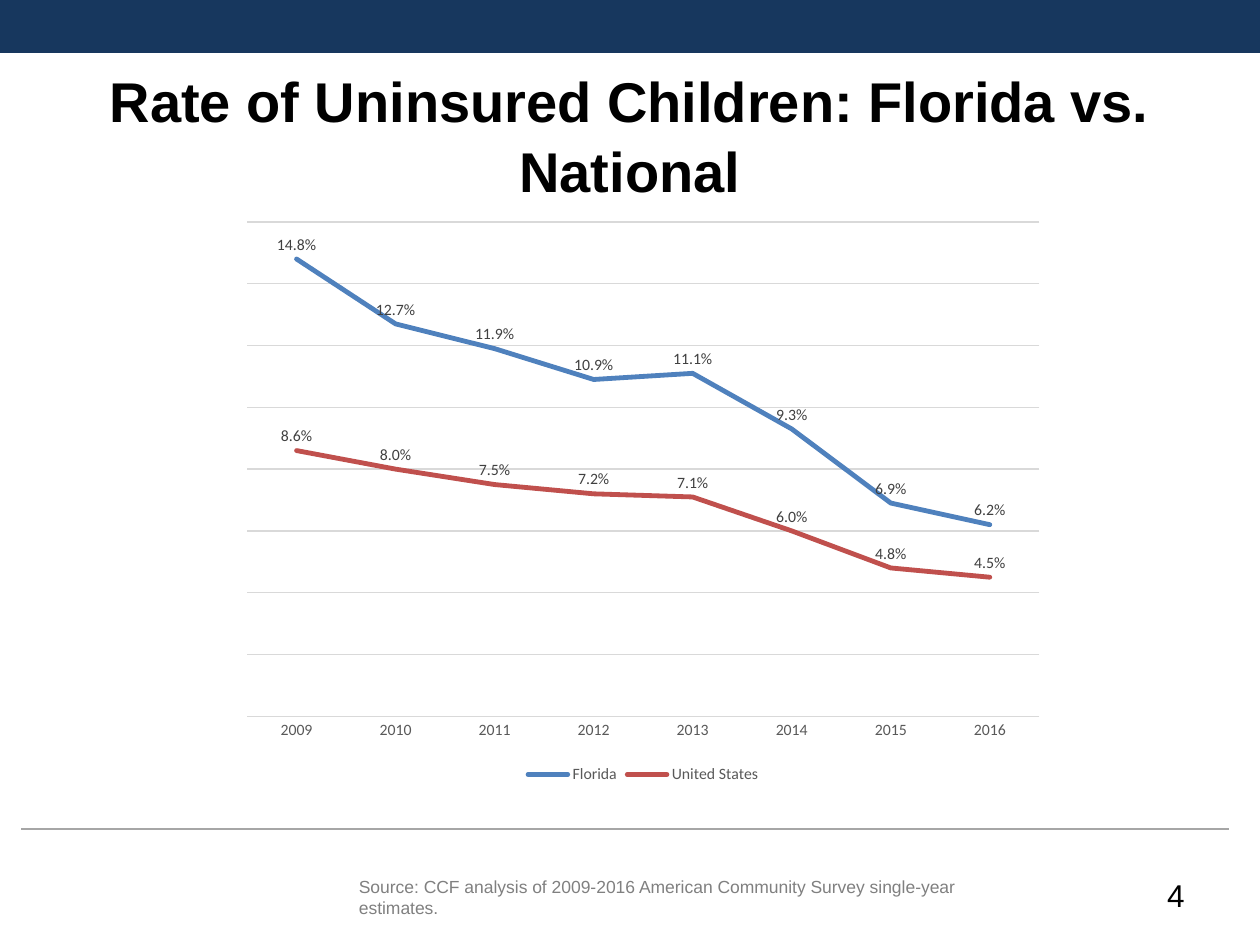
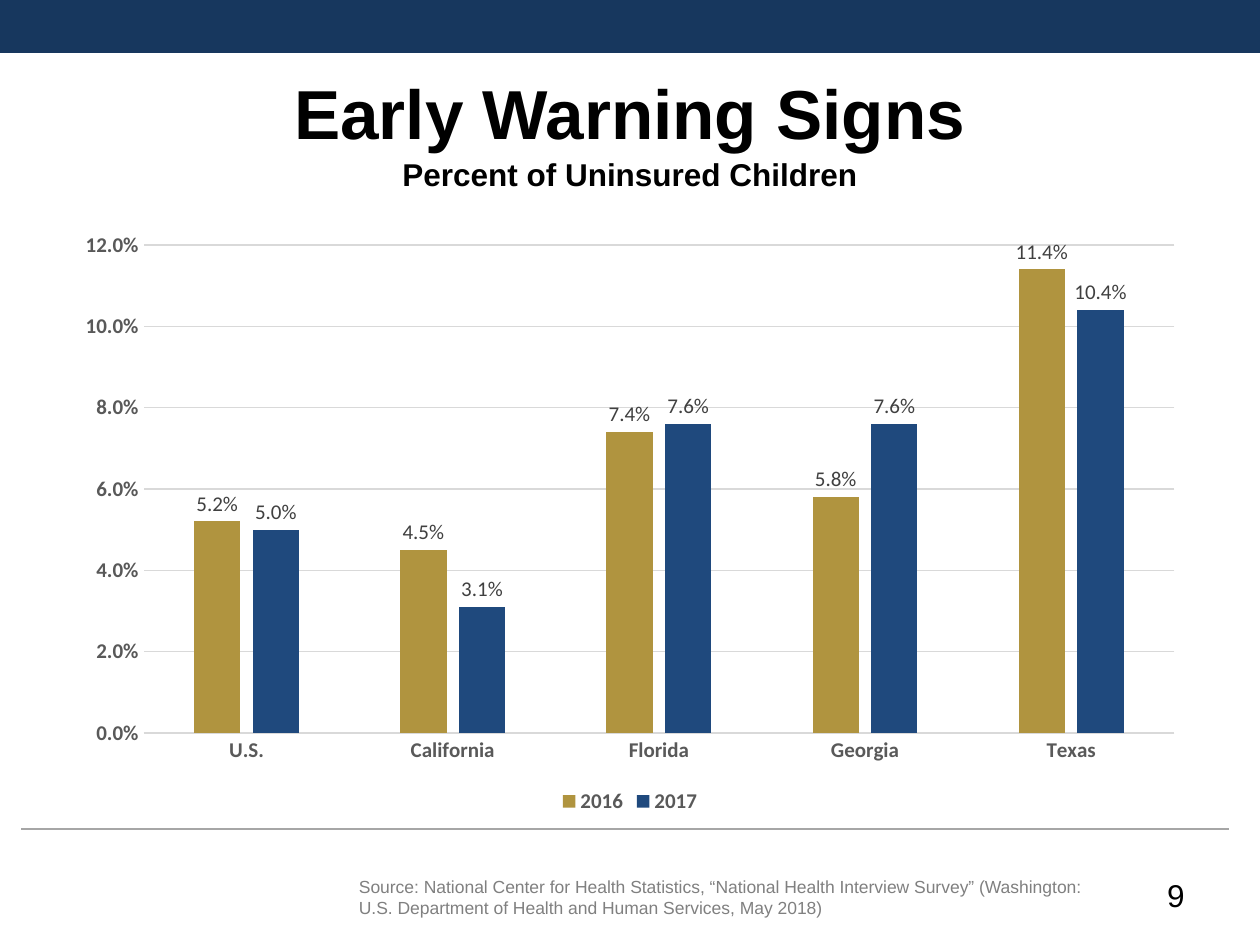
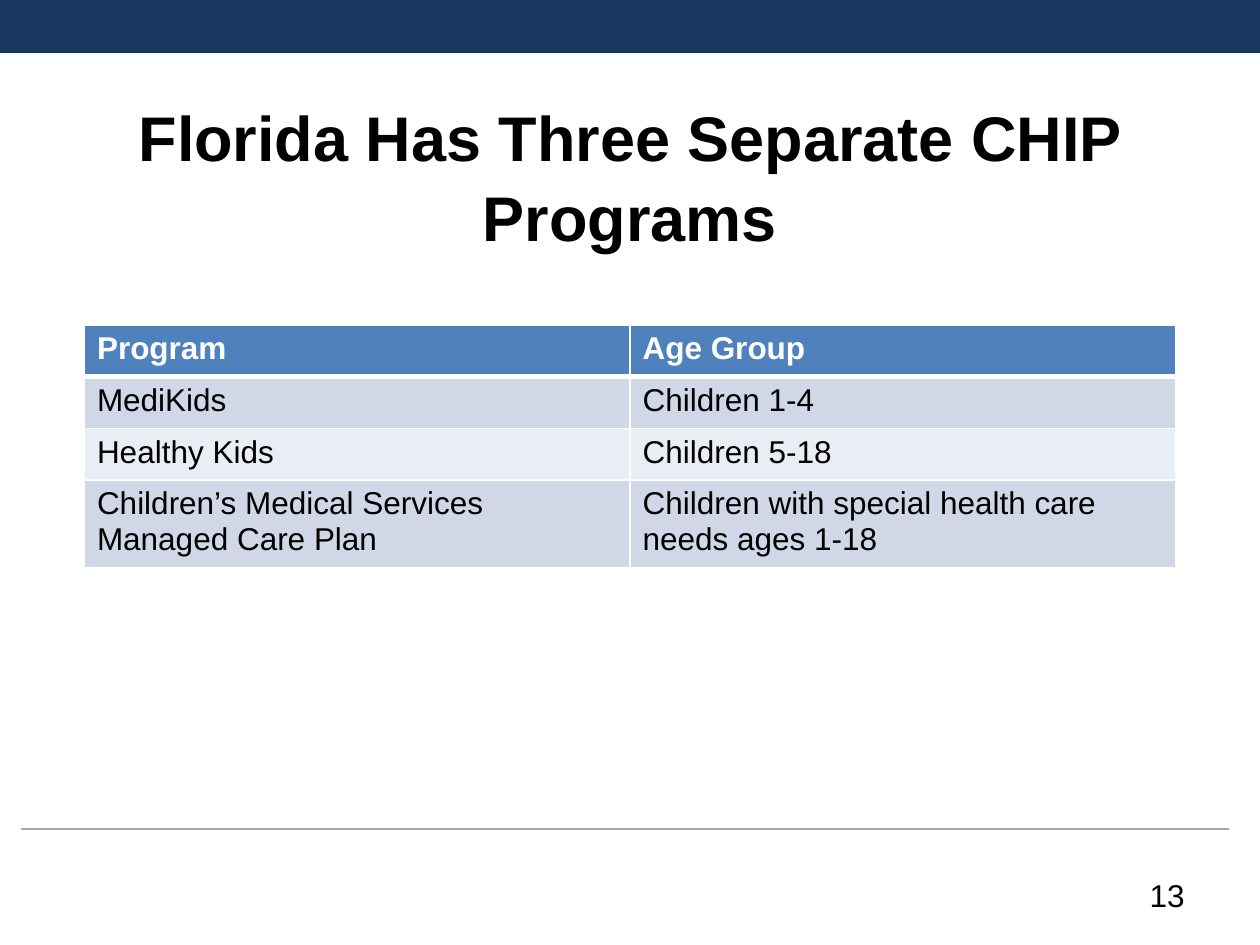
"""Build three slides on children's health coverage in Florida."""
from dataclasses import dataclass

from lxml.etree import SubElement
from pptx import Presentation
from pptx.chart.data import CategoryChartData
from pptx.dml.color import RGBColor as RGB
from pptx.enum.chart import (XL_CHART_TYPE as CT, XL_LABEL_POSITION as LP,
                             XL_LEGEND_POSITION as LEGEND, XL_TICK_MARK as TICK)
from pptx.enum.shapes import MSO_CONNECTOR as CONN, MSO_SHAPE as SHAPE
from pptx.enum.text import MSO_ANCHOR as ANCHOR, PP_ALIGN as ALIGN
from pptx.oxml.ns import qn
from pptx.util import Emu, Pt

PX = 9144


@dataclass(frozen=True)
class Theme:
    """Colours, fonts and type sizes of the deck."""
    band: str = "17375E"
    rule: str = "A6A6A6"
    text: str = "000000"
    white: str = "FFFFFF"
    source: str = "808080"
    axis: str = "595959"
    label: str = "404040"
    grid: str = "D9D9D9"
    header: str = "4F81BD"
    stripes: tuple[str, str] = ("D0D8E8", "E9EDF4")
    font: str = "Arial"
    chart_font: str = "Calibri"
    source_size: float = 10
    body_size: float = 18
    title_spacing: float = 1.05


@dataclass(frozen=True)
class Box:
    """A rectangle in px."""
    x: int
    y: int
    w: int
    h: int

    def emu(self) -> tuple[Emu, ...]:
        """Return the rectangle in EMU."""
        return tuple(Emu(v * PX) for v in (self.x, self.y, self.w, self.h))


@dataclass(frozen=True)
class Series:
    """One named chart series."""
    name: str
    color: str
    values: tuple[float, ...]


@dataclass(frozen=True)
class ChartSpec:
    """A chart with its data and format."""
    kind: CT
    box: Box
    categories: tuple[str, ...]
    series: tuple[Series, ...]
    maximum: float
    size: float
    bold: bool
    label_position: LP


@dataclass(frozen=True)
class Page:
    """The frame of one slide: title lines with sizes, number and source."""
    number: int
    title_box: Box
    title: tuple[tuple[str, float], ...]
    source: str = ""
    source_width: int = 0


THEME = Theme()
PAGE_W, PAGE_H = 1000, 750
FOOTER_Y, FOOTER_H = 690, 40

RATES = Page(4, Box(0, 77, 1000, 58),
             (("Rate of Uninsured Children: Florida vs. National", 32),),
             "Source: CCF analysis of 2009-2016 American Community Survey "
             "single-year estimates.", 533)
SIGNS = Page(9, Box(50, 50, 900, 105),
             (("Early Warning Signs", 39.6), ("Percent of Uninsured Children", 18)),
             "Source: National Center for Health Statistics, “National Health "
             "Interview Survey” (Washington: U.S. Department of Health and Human "
             "Services, May 2018)", 608)
PROGRAMS = Page(13, Box(50, 86, 900, 105),
                (("Florida Has Three Separate CHIP Programs", 36),))

RATE_CHART = ChartSpec(
    CT.LINE, Box(183, 167, 655, 459), tuple(str(y) for y in range(2009, 2017)),
    (Series("Florida", "4F81BD",
            (0.148, 0.127, 0.119, 0.109, 0.111, 0.093, 0.069, 0.062)),
     Series("United States", "C0504D",
            (0.086, 0.080, 0.075, 0.072, 0.071, 0.060, 0.048, 0.045))),
    0.16, 9, False, LP.ABOVE)
STATE_CHART = ChartSpec(
    CT.COLUMN_CLUSTERED, Box(50, 175, 900, 475),
    ("U.S.", "California", "Florida", "Georgia", "Texas"),
    (Series("2016", "B0943F", (0.052, 0.045, 0.074, 0.058, 0.114)),
     Series("2017", "1F497D", (0.050, 0.031, 0.076, 0.076, 0.104))),
    0.12, 12, True, LP.OUTSIDE_END)

PROGRAM_BOX = Box(67, 258, 866, 188)
ROW_HEIGHTS = (41, 41, 41, 65)
PROGRAM_ROWS = (
    ("Program", "Age Group"),
    ("MediKids", "Children 1-4"),
    ("Healthy Kids", "Children 5-18"),
    ("Children’s Medical Services Managed Care Plan",
     "Children with special health care needs ages 1-18"),
)


def set_font(font, *, size: float, color: str, bold: bool = False,
             name: str = THEME.font) -> None:
    """Format a font."""
    font.name, font.size, font.bold = name, Pt(size), bold
    font.color.rgb = RGB.from_string(color)


def set_line(line, color: str, width: float) -> None:
    """Give a line its colour and width."""
    line.color.rgb = RGB.from_string(color)
    line.width = Pt(width)


def write(p, text: str, *, size: float = THEME.body_size, color: str = THEME.text,
          bold: bool = False, align: ALIGN = ALIGN.LEFT) -> None:
    """Add a formatted run to a paragraph."""
    p.alignment = align
    r = p.add_run()
    r.text = text
    set_font(r.font, size=size, color=color, bold=bold)


def add_box(s, box: Box, anchor: ANCHOR = ANCHOR.TOP):
    """Add a wrapping text box and return its first paragraph."""
    tf = s.shapes.add_textbox(*box.emu()).text_frame
    tf.word_wrap = True
    tf.vertical_anchor = anchor
    return tf.paragraphs[0]


def add_page(prs, page: Page):
    """Add a slide with band, rule, title, source and number."""
    s = prs.slides.add_slide(prs.slide_layouts[6])
    band = s.shapes.add_shape(SHAPE.RECTANGLE, *Box(0, 0, PAGE_W, 42).emu())
    band.shadow.inherit = False
    band.fill.solid()
    band.fill.fore_color.rgb = RGB.from_string(THEME.band)
    band.line.fill.background()
    rule = s.shapes.add_connector(
        CONN.STRAIGHT, *(Emu(v * PX) for v in (17, 658, 975, 658)))
    set_line(rule.line, THEME.rule, 0.75)
    SubElement(rule._element.spPr, qn("a:effectLst"))

    p = add_box(s, page.title_box, ANCHOR.MIDDLE)
    p.line_spacing = THEME.title_spacing
    for i, (text, size) in enumerate(page.title):
        if i:
            p.add_line_break()
        write(p, text, size=size, bold=True, align=ALIGN.CENTER)
    if page.source:
        write(add_box(s, Box(275, FOOTER_Y, page.source_width, FOOTER_H)),
              page.source, size=THEME.source_size, color=THEME.source)
    write(add_box(s, Box(717, FOOTER_Y, 233, FOOTER_H)), str(page.number),
          align=ALIGN.RIGHT)
    return s


def format_axes(chart, spec: ChartSpec) -> None:
    """Format both axes of a chart."""
    for axis in (chart.category_axis, chart.value_axis):
        axis.major_tick_mark = axis.minor_tick_mark = TICK.NONE
        set_font(axis.tick_labels.font, size=spec.size, color=THEME.axis,
                 bold=spec.bold, name=THEME.chart_font)
    set_line(chart.category_axis.format.line, THEME.grid, 0.75)
    values = chart.value_axis
    values.minimum_scale, values.maximum_scale = 0, spec.maximum
    values.major_unit = 0.02
    values.tick_labels.number_format = "0.0%"
    values.tick_labels.number_format_is_linked = False
    values.format.line.fill.background()
    set_line(values.major_gridlines.format.line, THEME.grid, 0.75)
    values.visible = spec.kind != CT.LINE


def add_chart(s, spec: ChartSpec) -> None:
    """Draw a line or column chart."""
    data = CategoryChartData(number_format="0.0%")
    data.categories = spec.categories
    for item in spec.series:
        data.add_series(item.name, item.values)
    chart = s.shapes.add_chart(spec.kind, *spec.box.emu(), data).chart
    set_font(chart.font, size=10, color=THEME.text, name=THEME.chart_font)
    chart.has_title = False
    chart.has_legend = True
    chart.legend.position = LEGEND.BOTTOM
    chart.legend.include_in_layout = False
    set_font(chart.legend.font, size=spec.size, color=THEME.axis, bold=spec.bold,
             name=THEME.chart_font)
    format_axes(chart, spec)

    plot = chart.plots[0]
    plot.vary_by_categories = False
    if spec.kind == CT.COLUMN_CLUSTERED:
        plot.gap_width, plot.overlap = 219, -27
    for series, item in zip(plot.series, spec.series):
        if spec.kind == CT.LINE:
            series.smooth = False
            set_line(series.format.line, item.color, 2.75)
            series.format.line._get_or_add_ln().set("cap", "rnd")
            series.marker.style = None
            SubElement(series.marker._element.get_or_add_marker(),
                       qn("c:symbol")).set("val", "none")
        else:
            series.format.fill.solid()
            series.format.fill.fore_color.rgb = RGB.from_string(item.color)
        labels = series.data_labels
        labels.show_value = True
        labels.position = spec.label_position
        labels.number_format, labels.number_format_is_linked = "0.0%", False
        set_font(labels.font, size=spec.size, color=THEME.label,
                 name=THEME.chart_font)


def add_borders(cell, **widths: float) -> None:
    """Give a cell white borders of the given widths."""
    tc_pr = cell._tc.get_or_add_tcPr()
    for side, width in widths.items():
        ln = SubElement(tc_pr, qn(f"a:ln{side}"), w=str(Pt(width)))
        fill = SubElement(ln, qn("a:solidFill"))
        SubElement(fill, qn("a:srgbClr"), val=THEME.white)


def add_table(s, box: Box, rows: tuple[tuple[str, ...], ...]) -> None:
    """Draw a striped table with a header row."""
    table = s.shapes.add_table(len(rows), len(rows[0]), *box.emu()).table
    table.horz_banding = False
    for i, (texts, height) in enumerate(zip(rows, ROW_HEIGHTS)):
        table.rows[i].height = Emu(height * PX)
        header = i == 0
        fill = THEME.header if header else THEME.stripes[(i - 1) % 2]
        for j, text in enumerate(texts):
            cell = table.cell(i, j)
            add_borders(cell, L=1, R=1, T=3 if i == 1 else 1, B=3 if header else 1)
            cell.fill.solid()
            cell.fill.fore_color.rgb = RGB.from_string(fill)
            write(cell.text_frame.paragraphs[0], text, bold=header,
                  color=THEME.white if header else THEME.text)


def main() -> None:
    """Build and save the deck."""
    prs = Presentation()
    prs.slide_width, prs.slide_height = Emu(PAGE_W * PX), Emu(PAGE_H * PX)
    add_chart(add_page(prs, RATES), RATE_CHART)
    add_chart(add_page(prs, SIGNS), STATE_CHART)
    add_table(add_page(prs, PROGRAMS), PROGRAM_BOX, PROGRAM_ROWS)
    prs.save("out.pptx")


if __name__ == "__main__":
    main()
